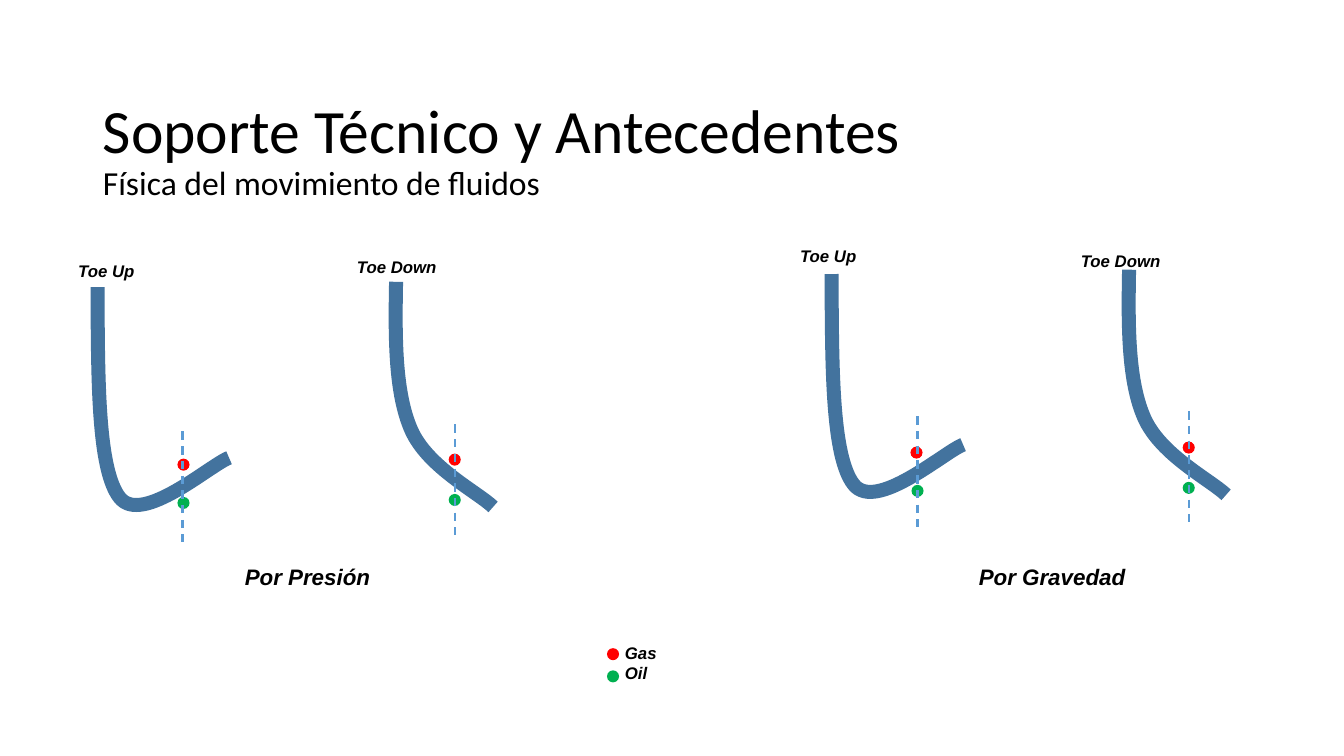
from lxml.etree import SubElement
from pptx import Presentation
from pptx.dml.color import RGBColor
from pptx.enum.dml import MSO_LINE
from pptx.enum.shapes import MSO_CONNECTOR, MSO_SHAPE
from pptx.enum.text import MSO_ANCHOR, MSO_AUTO_SIZE, PP_ALIGN
from pptx.oxml.ns import qn
from pptx.util import Inches, Pt

GAS, OIL, WELL, GUIDE, TEXT = "FF0000", "00B050", "43739E", "5B9BD5", "000000"
DOT = Inches(0.12)

# Well outlines: size, rotation, then a start point and two cubic curves
TOE_UP = (1.23, 2.2, 354, [(0.11, 0), (0.02, 0.9), (-0.08, 1.8), (0.11, 2.1),
                           (0.3, 2.4), (1.04, 1.87), (1.23, 1.82)])
TOE_DOWN = (0.82, 2.31, 354.9, [(0.06, 0), (0, 0.55), (-0.05, 1.1), (0.08, 1.48),
                                (0.21, 1.86), (0.68, 2.15), (0.82, 2.31)])


def color(hex_string):
    return RGBColor.from_string(hex_string)


def add_label(left, top, width, height, lines, size, align):
    frame = slide.shapes.add_textbox(
        Inches(left), Inches(top), Inches(width), Inches(height)).text_frame
    frame.word_wrap = True
    frame.text = "\n".join(lines)
    for paragraph in frame.paragraphs:
        paragraph.alignment = align
        font = paragraph.font
        font.name, font.size = "Arial", Pt(size)
        font.bold = font.italic = True
        font.color.rgb = color(TEXT)


presentation = Presentation()
presentation.slide_width, presentation.slide_height = Inches(13.33), Inches(7.5)
slide = presentation.slides.add_slide(presentation.slide_layouts[5])

# Title with a smaller second line
title = slide.shapes.title
title.left, title.top = Inches(0.92), Inches(0.94)
title.width, title.height = Inches(11.5), Inches(0.78)
title.text_frame.vertical_anchor = MSO_ANCHOR.TOP
title.text_frame.auto_size = MSO_AUTO_SIZE.NONE
paragraph = title.text_frame.paragraphs[0]
paragraph.alignment, paragraph.line_spacing = PP_ALIGN.LEFT, 0.9
for text, size in [("Soporte Técnico y Antecedentes", 44),
                   ("Física del movimiento de fluidos", 24)]:
    if paragraph.runs:
        paragraph.add_line_break()
    run = paragraph.add_run()
    run.text = text
    run.font.name, run.font.size = "Calibri", Pt(size)
    run.font.color.rgb = color(TEXT)

# Wells: outline, left, top, guide x, guide top
wells = [(TOE_UP, 0.97, 2.79, 1.81, 4.28), (TOE_DOWN, 3.97, 2.76, 4.51, 4.21),
         (TOE_UP, 8.25, 2.66, 9.1, 4.13), (TOE_DOWN, 11.24, 2.64, 11.79, 4.08)]
# Dots: left, top, fill; the last two belong to the legend
dots = [(1.76, 4.55, GAS), (1.76, 4.93, OIL), (4.45, 4.5, GAS), (4.45, 4.9, OIL),
        (9.03, 4.43, GAS), (9.04, 4.81, OIL), (11.73, 4.38, GAS), (11.73, 4.78, OIL),
        (6.02, 6.43, GAS), (6.02, 6.65, OIL)]

# Well curves
for (width, height, rotation, points), left, top, _, _ in wells:
    builder = slide.shapes.build_freeform(Inches(left), Inches(top))
    builder.add_line_segments([(Inches(left + width), Inches(top + height))], close=False)
    shape = builder.convert_to_shape()
    shape.rotation = rotation
    shape.shadow.inherit = False
    shape.fill.background()
    shape.line.color.rgb, shape.line.width = color(WELL), Pt(10)
    outline = next(shape._element.iter(qn("a:path")))
    for segment in list(outline):
        outline.remove(segment)
    for tag, group in [("a:moveTo", points[:1]), ("a:cubicBezTo", points[1:4]),
                       ("a:cubicBezTo", points[4:])]:
        segment = SubElement(outline, qn(tag))
        for x, y in group:
            SubElement(segment, qn("a:pt"), x=str(Inches(x)), y=str(Inches(y)))

# Gas and oil dots
for left, top, fill in dots:
    dot = slide.shapes.add_shape(MSO_SHAPE.OVAL, Inches(left), Inches(top), DOT, DOT)
    dot.shadow.inherit = False
    dot.fill.solid()
    dot.fill.fore_color.rgb = color(fill)
    dot.line.fill.background()

# Dashed vertical guides
for _, _, _, x, top in wells:
    guide = slide.shapes.add_connector(
        MSO_CONNECTOR.STRAIGHT, Inches(x), Inches(top), Inches(x), Inches(top + 1.1))
    guide.line.color.rgb, guide.line.width = color(GUIDE), Pt(1.5)
    guide.line.dash_style = MSO_LINE.DASH
    SubElement(guide._element.spPr, qn("a:effectLst"))

# Well names, panel captions and legend
for left, top, name in [(0.24, 2.54, "Toe Up"), (3.12, 2.5, "Toe Down"),
                        (7.4, 2.39, "Toe Up"), (10.3, 2.44, "Toe Down")]:
    add_label(left, top, 1.63, 0.3, [name], 12, PP_ALIGN.CENTER)
add_label(2.33, 5.54, 1.53, 0.37, ["Por Presión"], 16, PP_ALIGN.LEFT)
add_label(9.61, 5.54, 1.74, 0.37, ["Por Gravedad"], 16, PP_ALIGN.LEFT)
add_label(6.1, 6.33, 1.63, 0.5, ["Gas", "Oil"], 12, PP_ALIGN.LEFT)

presentation.save("out.pptx")
